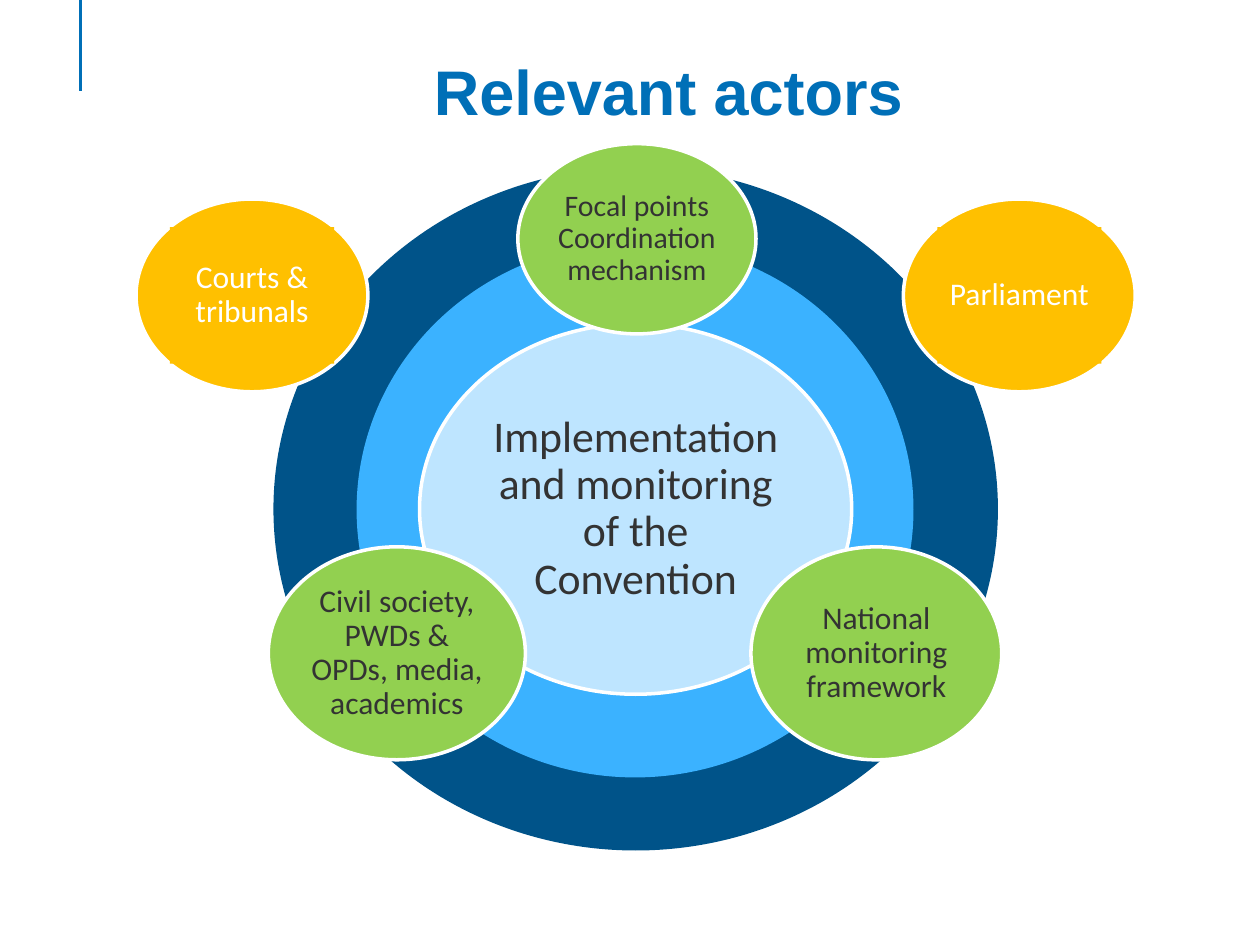
from dataclasses import dataclass
from typing import Optional

from lxml.etree import SubElement
from pptx import Presentation
from pptx.dml.color import RGBColor
from pptx.enum.shapes import MSO_CONNECTOR as Conn, MSO_SHAPE as Kind
from pptx.enum.text import MSO_ANCHOR as Anchor, PP_ALIGN as Align
from pptx.oxml.ns import qn
from pptx.util import Inches, Pt

BLUE = RGBColor(0x00, 0x6F, 0xB7)
NAVY = RGBColor(0x00, 0x53, 0x89)
SKY = RGBColor(0x3B, 0xB2, 0xFF)
PALE = RGBColor(0xBE, 0xE5, 0xFF)
GREEN = RGBColor(0x92, 0xD0, 0x50)
GOLD = RGBColor(0xFF, 0xC0, 0x00)
DARK = RGBColor(0x33, 0x33, 0x33)
WHITE = RGBColor(0xFF, 0xFF, 0xFF)

# The slide is a grid of 100 columns and 75 rows of square cells
COLS, ROWS = 100, 75
CELL = Inches(0.1)
# Share of an ellipse's size between its frame and its inner box
INSET = 0.146


@dataclass
class Box:
    col: float
    row: float
    wide: float
    high: float

    def inner(self) -> "Box":
        return Box(self.col + self.wide * INSET, self.row + self.high * INSET,
                   self.wide * (1 - 2 * INSET), self.high * (1 - 2 * INSET))

    def place(self) -> tuple:
        return tuple(round(n * CELL)
                     for n in (self.col, self.row, self.wide, self.high))


@dataclass
class Actor:
    text: str
    box: Box
    fill: RGBColor = GREEN
    ink: RGBColor = DARK
    size: int = 18
    pad: float = 0.03
    panel: bool = False  # the label sits on a filled rectangle


RINGS = [(Box(21.7, 13.3, 57.5, 54.2), NAVY), (Box(28.3, 19.2, 44.2, 42.5), SKY)]

ACTORS = [
    Actor("Implementation and monitoring of the Convention",
          Box(33.3, 25.7, 34.3, 29.4), PALE, size=25),
    Actor("Focal points Coordination mechanism",
          Box(41.1, 11.4, 18.9, 15.1), size=17, pad=0.02),
    Actor("National monitoring framework", Box(59.6, 43.4, 19.9, 16.9)),
    Actor("Civil society, PWDs & OPDs, media, academics",
          Box(21.3, 43.4, 20.4, 16.9)),
    Actor("Parliament", Box(71.7, 15.8, 18.4, 15.3), GOLD, WHITE,
          pad=0.02, panel=True),
    Actor("Courts & tribunals", Box(10.8, 15.8, 18.4, 15.3), GOLD, WHITE,
          pad=0.02, panel=True),
]


def draw(shapes, kind: Kind, box: Box, fill: RGBColor,
         edge: Optional[RGBColor] = None):
    shape = shapes.add_shape(kind, *box.place())
    shape.shadow.inherit = False
    shape.fill.solid()
    shape.fill.fore_color.rgb = fill
    if edge is None:
        shape.line.fill.background()
    else:
        shape.line.color.rgb = edge
        shape.line.width = Pt(2)
    return shape


def add_actor(shapes, actor: Actor) -> None:
    draw(shapes, Kind.OVAL, actor.box, actor.fill, WHITE)
    inner = actor.box.inner()
    if actor.panel:
        label = draw(shapes, Kind.RECTANGLE, inner, actor.fill)
    else:
        label = shapes.add_textbox(*inner.place())
    frame = label.text_frame
    frame.text = actor.text
    frame.word_wrap = True
    frame.vertical_anchor = Anchor.MIDDLE
    frame.margin_left = frame.margin_right = Inches(actor.pad)
    frame.margin_top = frame.margin_bottom = Inches(actor.pad)
    para = frame.paragraphs[0]
    para.alignment = Align.CENTER
    para.line_spacing = 0.9
    font = para.runs[0].font
    font.name, font.size = "Calibri", Pt(actor.size)
    font.color.rgb = actor.ink


def add_title(title, text: str, box: Box) -> None:
    title.left, title.top, title.width, title.height = box.place()
    frame = title.text_frame
    frame.text = text
    frame.word_wrap = True
    frame.vertical_anchor = Anchor.MIDDLE
    para = frame.paragraphs[0]
    para.alignment = Align.CENTER
    props = para._p.get_or_add_pPr()
    props.set("marL", str(Inches(0.5)))
    props.set("indent", "0")
    font = para.runs[0].font
    font.name, font.size, font.bold = "Arial", Pt(36), True
    font.color.rgb = BLUE


def add_rule(shapes, col: float, end: float) -> None:
    x = round(col * CELL)
    rule = shapes.add_connector(Conn.STRAIGHT, x, 0, x, round(end * CELL))
    rule.line.color.rgb = BLUE
    rule.line.width = Pt(2)
    SubElement(rule._element.spPr, qn("a:effectLst"))


def main() -> None:
    deck = Presentation()
    deck.slide_width, deck.slide_height = COLS * CELL, ROWS * CELL
    slide = deck.slides.add_slide(deck.slide_layouts[5])
    shapes = slide.shapes

    # Corner rule and title
    add_rule(shapes, 6.4, 7.2)
    add_title(shapes.title, "Relevant actors", Box(5, 3.6, 91.1, 7.1))

    # Rings, then the actors around the centre
    for box, fill in RINGS:
        draw(shapes, Kind.FLOWCHART_CONNECTOR, box, fill)
    for actor in ACTORS:
        add_actor(shapes, actor)

    deck.save("out.pptx")


if __name__ == "__main__":
    main()
